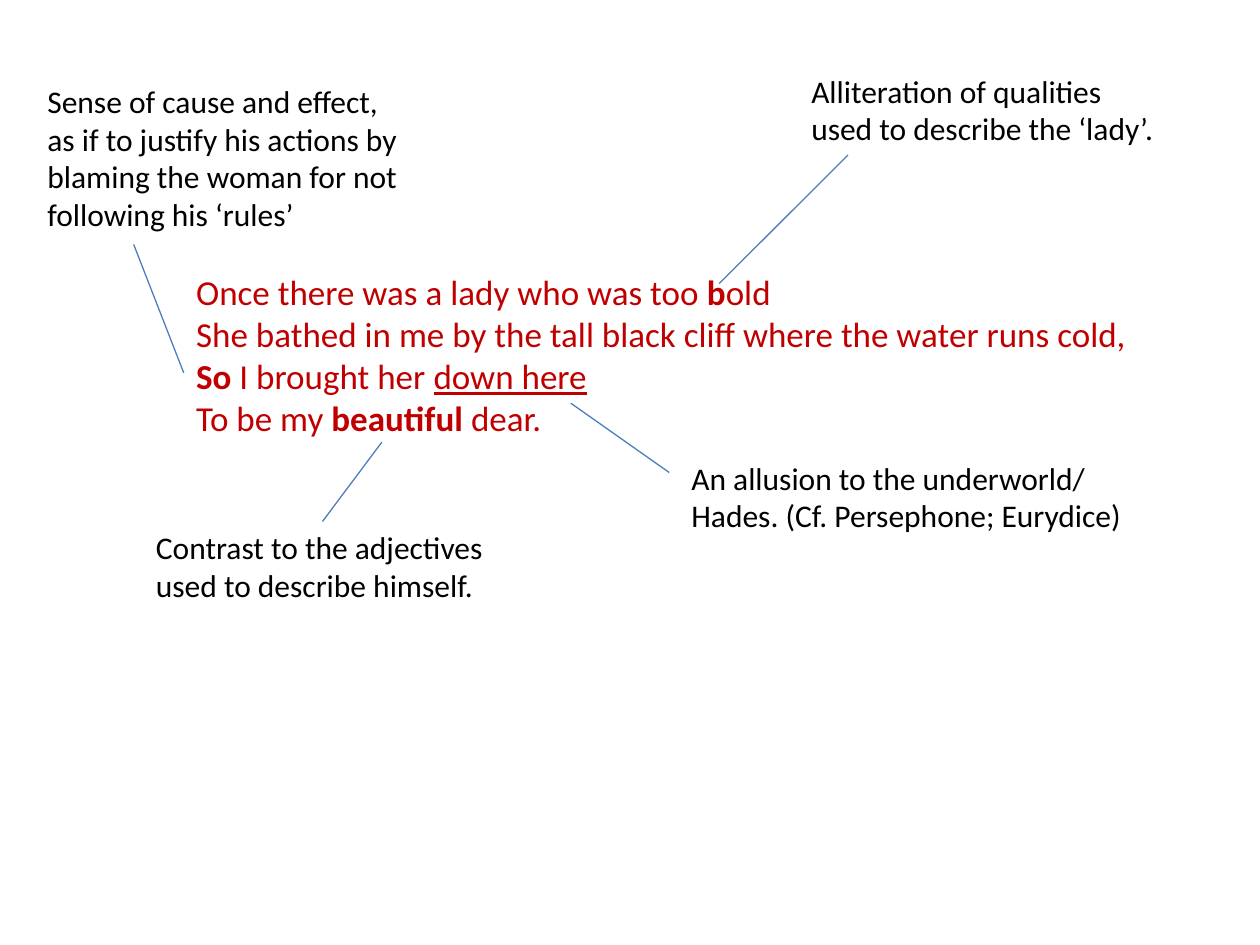
import pptx
import pptx.dml.color
import pptx.enum.shapes
import pptx.enum.text
import pptx.oxml.ns
import pptx.util
from lxml import etree

Pt = pptx.util.Pt


def color(value):
    return pptx.dml.color.RGBColor.from_string(value)


class AnnotatedSlide:
    font = "Calibri"
    note_color = "000000"
    poem_color = "C00000"
    line_color = "4B7EBC"
    note_size = 18
    poem_size = 20
    line_width = 0.75

    def __init__(self, presentation):
        self.slide = presentation.slides.add_slide(presentation.slide_layouts[6])

    def text(self, left, top, width, height, paragraphs, size, text_color):
        shape = self.slide.shapes.add_textbox(Pt(left), Pt(top), Pt(width), Pt(height))
        frame = shape.text_frame
        frame.word_wrap = True
        frame.auto_size = pptx.enum.text.MSO_AUTO_SIZE.SHAPE_TO_FIT_TEXT
        for index, pieces in enumerate(paragraphs):
            paragraph = frame.add_paragraph() if index else frame.paragraphs[0]
            for words, emphasis in pieces:
                run = paragraph.add_run()
                run.text = words
                run.font.name = self.font
                run.font.size = Pt(size)
                run.font.color.rgb = color(text_color)
                run.font.bold = emphasis == "bold"
                run.font.underline = emphasis == "underline"

    def poem(self, left, top, width, height, verses):
        self.text(left, top, width, height, verses, self.poem_size, self.poem_color)

    def note(self, left, top, width, height, *sentences):
        paragraphs = [[(sentence, "")] for sentence in sentences]
        self.text(left, top, width, height, paragraphs, self.note_size, self.note_color)

    def pointer(self, start_x, start_y, end_x, end_y):
        connector = self.slide.shapes.add_connector(
            pptx.enum.shapes.MSO_CONNECTOR.STRAIGHT,
            Pt(start_x), Pt(start_y), Pt(end_x), Pt(end_y))
        connector.line.color.rgb = color(self.line_color)
        connector.line.width = Pt(self.line_width)
        etree.SubElement(connector._element.spPr, pptx.oxml.ns.qn("a:effectLst"))


def main():
    presentation = pptx.Presentation()
    presentation.slide_width = Pt(720)
    presentation.slide_height = Pt(540)
    page = AnnotatedSlide(presentation)

    page.poem(105, 151.2, 556, 104.4, [
        [("Once there was a lady who was too ", ""), ("b", "bold"), ("old", "")],
        [("She bathed in me by the tall black cliff where the water runs cold,", "")],
        [("So", "bold"), (" I brought her ", ""), ("down here", "underline")],
        [("To be my ", ""), ("beautiful ", "bold"), ("dear.", "")],
    ])

    page.note(20, 43.2, 221, 94.3,
              "Sense of cause and effect, as if to justify his actions by",
              "blaming the woman for not",
              "following his ‘rules’")
    page.note(388, 258.5, 266.4, 51,
              "An allusion to the underworld/ Hades. (Cf. Persephone; Eurydice)")
    page.note(82, 298, 226.8, 51,
              "Contrast to the adjectives used to describe himself.")
    page.note(456.5, 37.4, 215.3, 51,
              "Alliteration of qualities used to describe the ‘lady’.")

    page.pointer(105, 213.1, 76.4, 139.7)
    page.pointer(326.2, 230.4, 382.4, 270)
    page.pointer(218.2, 252.7, 184.3, 298)
    page.pointer(411, 162, 484.6, 88.6)

    presentation.save("out.pptx")


if __name__ == "__main__":
    main()
